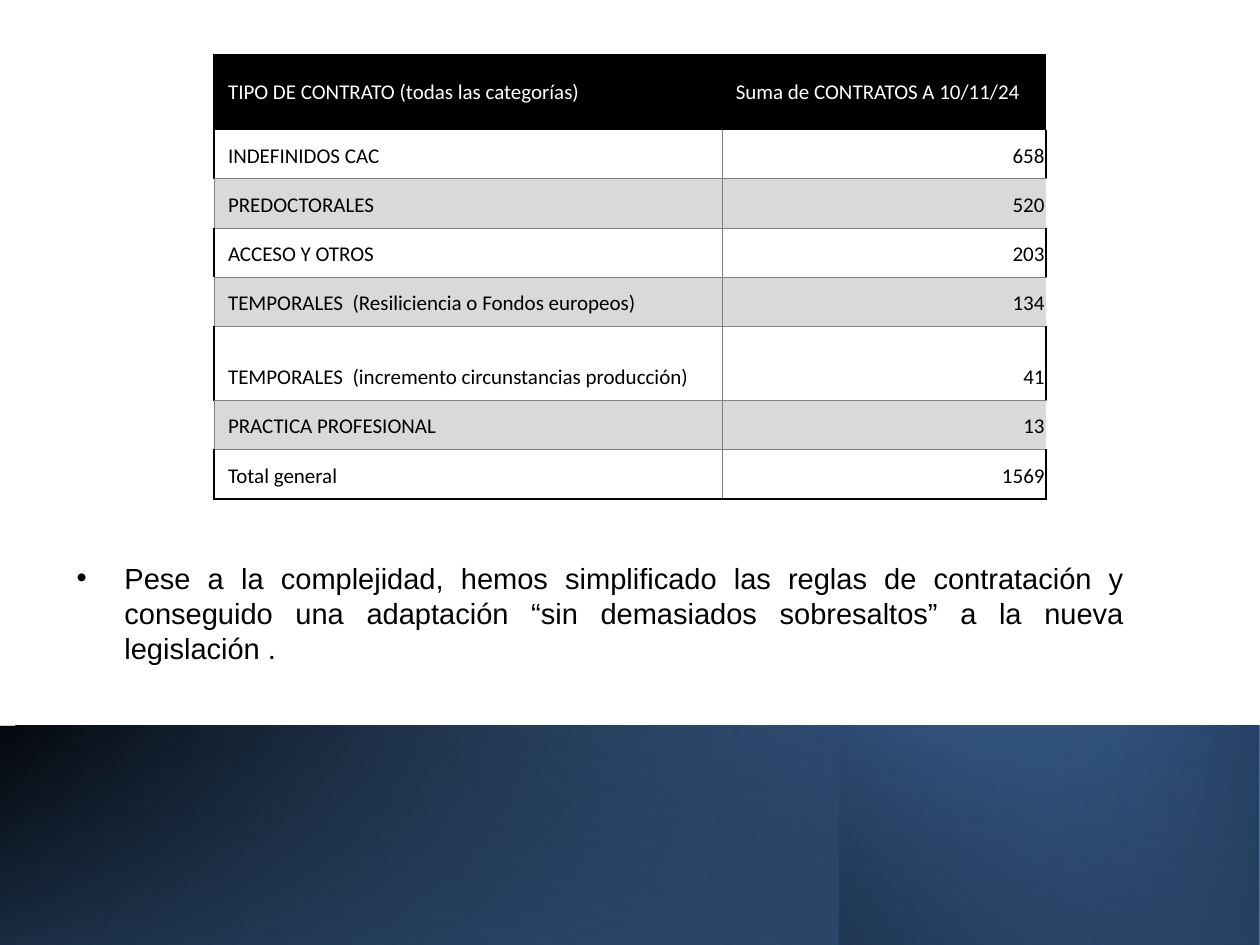
from lxml import etree
from pptx import Presentation
from pptx.dml.color import RGBColor
from pptx.enum.shapes import MSO_SHAPE
from pptx.enum.text import MSO_ANCHOR, PP_ALIGN
from pptx.oxml.ns import qn
from pptx.util import Inches, Pt

RECTANGLE = MSO_SHAPE.RECTANGLE
MIDDLE, BOTTOM = MSO_ANCHOR.MIDDLE, MSO_ANCHOR.BOTTOM
LEFT, RIGHT, JUSTIFY = PP_ALIGN.LEFT, PP_ALIGN.RIGHT, PP_ALIGN.JUSTIFY
NO_GRID_STYLE = "{2D5ABB26-0587-4C30-8999-92F81FD0307C}"
BLACK, WHITE, BAND_GREY = "000000", "FFFFFF", "D9D9D9"
BLUE, NAVY = "4F81BD", "254061"
THICK, THIN = (BLACK, 1.5), ("808080", 0.5)


def color(hex_value):
    return RGBColor.from_string(hex_value)


def add_element(parent, tag, **attributes):
    element = etree.SubElement(parent, qn(tag))
    for key, value in attributes.items():
        element.set(key, str(value))
    return element


prs = Presentation()
prs.slide_width, prs.slide_height = Inches(10), Inches(7.5)
slide = prs.slides.add_slide(prs.slide_layouts[6])

# Footer: layered gradients; stops are position, colour, opacity in percent
footer_layers = [
    ((0, 5.76, 10, 1.74), 0, 140, [(0, BLACK, 100), (100, BLUE, 100)]),
    ((0, 5.76, 9.99, 1.74), 0, 170, [(0, BLUE, 0), (100, NAVY, 100)]),
    ((6.66, 5.76, 3.34, 1.74), 0, 220, [(0, NAVY, 100), (100, BLUE, 0)]),
    ((-0.01, 5.76, 10, 1.75), 180, 280, [(0, BLACK, 0), (99, NAVY, 55)]),
]
for place, rotation, angle, stops in footer_layers:
    layer = slide.shapes.add_shape(RECTANGLE, *[Inches(n) for n in place])
    layer.shadow.inherit = False
    layer.line.fill.background()
    layer.rotation = rotation
    properties = layer._element.spPr
    if not rotation:
        properties.find(qn("a:xfrm")).set("flipH", "1")
    gradient = add_element(properties, "a:gradFill", rotWithShape=1)
    properties.find(qn("a:prstGeom")).addnext(gradient)
    stop_list = add_element(gradient, "a:gsLst")
    for position, hex_value, opacity in stops:
        stop = add_element(stop_list, "a:gs", pos=position * 1000)
        tint = add_element(stop, "a:srgbClr", val=hex_value)
        if opacity < 100:
            add_element(tint, "a:alpha", val=opacity * 1000)
    add_element(gradient, "a:lin", ang=angle * 60000, scaled=0)

# Closing remark
remark = slide.shapes.add_textbox(Inches(0.51), Inches(4.19), Inches(8.5), Inches(1.22))
remark_format = {"word_wrap": True, "vertical_anchor": MIDDLE,
                 "margin_top": Inches(0.17), "margin_bottom": Inches(0.05)}
for key, value in remark_format.items():
    setattr(remark.text_frame, key, value)
paragraph = remark.text_frame.paragraphs[0]
paragraph.text = ("Pese a la complejidad, hemos simplificado las reglas de contratación y "
                  "conseguido una adaptación “sin demasiados sobresaltos” a la nueva "
                  "legislación .")
paragraph.alignment = JUSTIFY
paragraph.line_spacing = Pt(20)
indents = paragraph._p.get_or_add_pPr()
indents.set("marL", str(Inches(0.38)))
indents.set("indent", str(-Inches(0.38)))
add_element(indents, "a:buFont", typeface="Arial")
add_element(indents, "a:buChar", char="•")
remark_font = {"name": "Arial", "size": Pt(16.6)}
for key, value in remark_font.items():
    setattr(paragraph.runs[0].font, key, value)
paragraph.runs[0].font.color.rgb = color(BLACK)

# Contracts table
contracts = [
    ("TIPO DE CONTRATO (todas las categorías)", "Suma de CONTRATOS A 10/11/24"),
    ("INDEFINIDOS CAC", "658"),
    ("PREDOCTORALES", "520"),
    ("ACCESO Y OTROS", "203"),
    ("TEMPORALES  (Resiliciencia o Fondos europeos)", "134"),
    ("TEMPORALES  (incremento circunstancias producción)", "41"),
    ("PRACTICA PROFESIONAL", "13"),
    ("Total general", "1569"),
]
TALL_ROWS = (0, 5)
last_row = len(contracts) - 1
table = slide.shapes.add_table(len(contracts), 2, Inches(1.7), Inches(0.44),
                               Inches(6.6), Inches(3.52)).table
table.first_row = table.horz_banding = False
table._tbl.tblPr.find(qn("a:tableStyleId")).text = NO_GRID_STYLE
for column, width in zip(table.columns, (4.03, 2.57)):
    column.width = Inches(width)

cell_format = {"margin_left": Inches(0.11), "margin_right": Inches(0.01),
               "margin_top": Inches(0.08), "margin_bottom": Inches(0.08)}
cell_font = {"name": "Calibri", "size": Pt(12)}
for r, contract in enumerate(contracts):
    table.rows[r].height = Inches(0.59 if r in TALL_ROWS else 0.39)
    header, shaded = r == 0, r > 0 and r % 2 == 0
    for c, text in enumerate(contract):
        cell = table.cell(r, c)
        for key, value in cell_format.items():
            setattr(cell, key, value)
        cell.vertical_anchor = MIDDLE if header else BOTTOM
        cell.text = text
        entry = cell.text_frame.paragraphs[0]
        entry.alignment = RIGHT if c and not header else LEFT
        for key, value in cell_font.items():
            setattr(entry.runs[0].font, key, value)
        entry.runs[0].font.color.rgb = color(WHITE if header else BLACK)

        # Borders follow the row kind: header, shaded or plain
        if header:
            borders = {"T": THICK} if c else {"L": THICK, "T": THICK}
        elif shaded:
            borders = {"L": THIN, "T": THIN} if c else {"L": THIN, "R": THIN, "T": THIN}
        else:
            borders = {"L": THIN if c else THICK, "R": THICK if c else THIN,
                       "B": THICK if r == last_row else THIN}
        for side, (hex_value, points) in borders.items():
            edge = add_element(cell._tc.get_or_add_tcPr(), "a:ln" + side, w=Pt(points))
            add_element(add_element(edge, "a:solidFill"), "a:srgbClr", val=hex_value)

        if header or shaded:
            cell.fill.solid()
            cell.fill.fore_color.rgb = color(BLACK if header else BAND_GREY)
        else:
            cell.fill.background()

prs.save("out.pptx")
